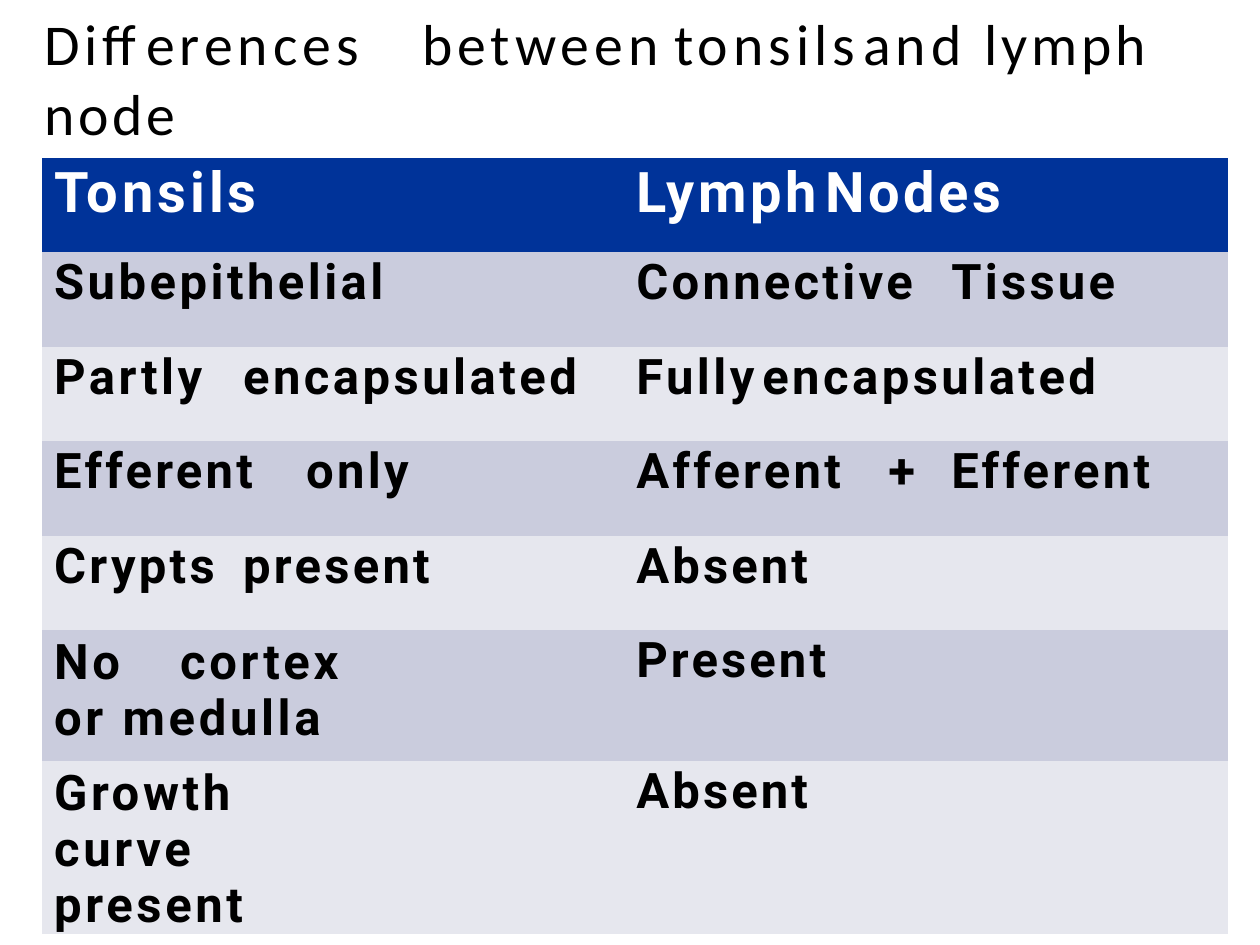
from pptx import Presentation
from pptx.dml.color import RGBColor
from pptx.enum import text as t
from pptx.oxml.ns import qn
from pptx.util import Inches, Pt
from lxml import etree

COLORS = {"head": "003399", "dark": "CACCDD", "light": "E6E7EE",
          "white": "FFFFFF", "black": "000000"}

# Each run is (text, letter spacing in points)
TITLE = [("Differences\tbetween\ttonsils\tand ", 2.9), ("lymph\tnode", 2.2)]
TITLE_TABS = [1.8, 3.4, 5.88, 7.93]

# Each cell is (text, letter spacing, tab stops in inches)
ROWS = [
    [("Tonsils", 2.2, []), ("Lymph\tNodes", 2, [1.89])],
    [("Subepithelial", 2, []), ("Connective\tTissue", 1.9, [2.68])],
    [("Partly\tencapsulated", 2, [1.5]), ("Fully\tencapsulated", 2, [1.34])],
    [("Efferent\tonly", 1.9, [1.98]), ("Afferent\t+\tEfferent", 1.9, [2.1, 2.48])],
    [("Crypts\tpresent", 1.9, [1.58]), ("Absent", 1.8, [])],
    [("No\tcortex\tor medulla", 2.1, [0.78, 2.27]), ("Present", 1.8, [])],
    [("Growth\tcurve present", 2.1, [1.72]), ("Absent", 1.8, [])],
]
WIDTHS = [4.53, 4.89]
HEIGHTS = [0.75] * 5 + [1.04] * 2
INDENTS = [0.1, 0.19]
NARROW = 2.13  # right margin that wraps the long cells
PLAIN = "{2D5ABB26-0587-4C30-8999-92F81FD0307C}"  # table style without borders


def put(item, form):
    for name, value in form.items():
        setattr(item, name, value)


def rgb(name):
    return RGBColor.from_string(COLORS[name])


def write(para, runs, form, color, indent, before, tabs):
    """Fill a paragraph with spaced runs, an indent and left tab stops."""
    put(para, {"alignment": t.PP_ALIGN.LEFT, "space_before": Pt(before)})
    props = para._p.get_or_add_pPr()
    props.set("marL", str(Inches(indent)))
    props.set("indent", "0")
    if tabs:
        stops = etree.SubElement(props, qn("a:tabLst"))
        for pos in tabs:
            etree.SubElement(stops, qn("a:tab"), pos=str(Inches(pos)), algn="l")
    for words, gap in runs:
        run = para.add_run()
        run.text = words
        put(run.font, form)
        run.font.color.rgb = rgb(color)
        run._r.get_or_add_rPr().set("spc", str(round(gap * 100)))


def add_title(slide):
    title = slide.shapes.title
    put(title, {"left": Inches(0.34), "top": Inches(0.05),
                "width": Inches(8.91), "height": Inches(1.12)})
    frame = title.text_frame
    put(frame, {"margin_left": 0, "margin_right": 0, "margin_bottom": 0,
                "margin_top": Inches(0.01), "word_wrap": True,
                "auto_size": t.MSO_AUTO_SIZE.NONE,
                "vertical_anchor": t.MSO_ANCHOR.MIDDLE})
    write(frame.paragraphs[0], TITLE, {"name": "Calibri", "size": Pt(33)},
          "black", 0.01, 1, TITLE_TABS)


def add_grid(slide):
    frame = slide.shapes.add_table(
        len(ROWS), len(WIDTHS), Inches(0.33), Inches(1.25),
        Inches(sum(WIDTHS)), Inches(sum(HEIGHTS)))
    next(frame._element.iter(qn("a:tableStyleId"))).text = PLAIN
    grid = frame.table
    for col, width in zip(grid.columns, WIDTHS):
        col.width = Inches(width)
    for r, (row, height) in enumerate(zip(ROWS, HEIGHTS)):
        grid.rows[r].height = Inches(height)
        head = r == 0
        fill = "head" if head else "dark" if r % 2 else "light"
        form = {"name": "Roboto", "bold": True, "size": Pt(32 if head else 28)}
        for c, (words, gap, tabs) in enumerate(row):
            wraps = c == 0 and height > 1
            cell = grid.cell(r, c)
            put(cell, {"margin_left": 0, "margin_bottom": 0,
                       "margin_right": Inches(NARROW if wraps else 0),
                       "margin_top": Inches(0.05 if wraps else 0.02)})
            cell.fill.solid()
            cell.fill.fore_color.rgb = rgb(fill)
            para = cell.text_frame.paragraphs[0]
            if wraps:
                para.line_spacing = Pt(31.8)
            write(para, [(words, gap)], form, "white" if head else "black",
                  INDENTS[c], 4 if wraps else 1.3, tabs)


def main():
    deck = Presentation()
    put(deck, {"slide_width": Inches(10), "slide_height": Inches(7.5)})
    slide = deck.slides.add_slide(deck.slide_layouts[5])
    add_title(slide)
    add_grid(slide)
    deck.save("out.pptx")


if __name__ == "__main__":
    main()
